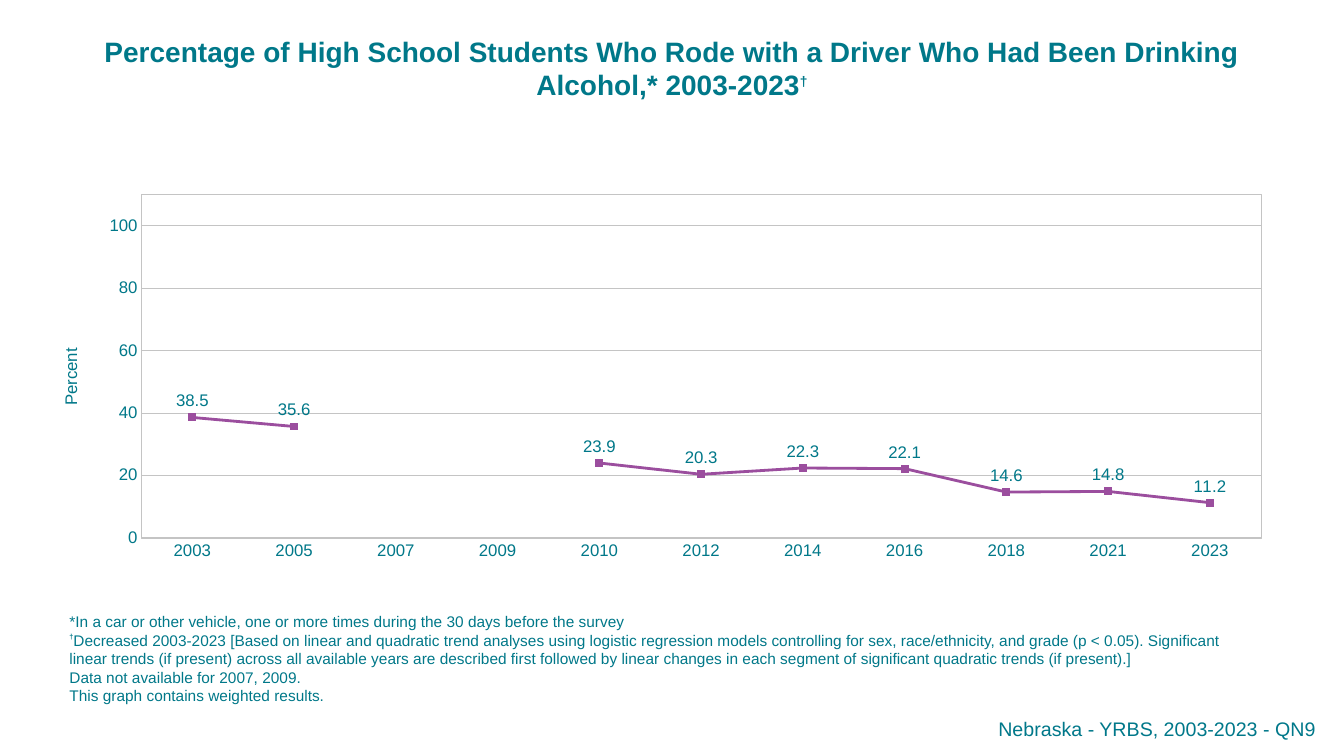
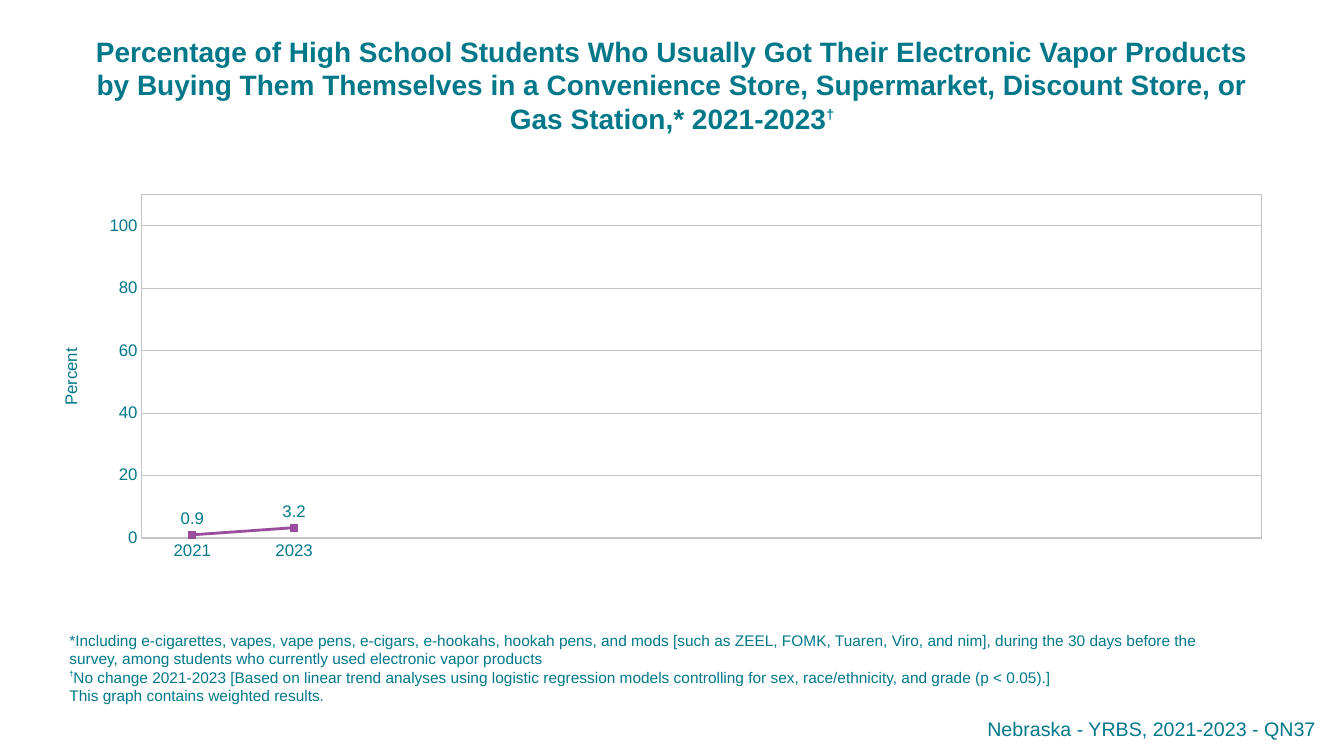
import dataclasses

import lxml.etree
import pptx
import pptx.chart.data
import pptx.dml.color
import pptx.enum.chart
import pptx.enum.text
import pptx.oxml
import pptx.oxml.ns
import pptx.util
from pptx.util import Inches

ALIGN = pptx.enum.text.PP_ALIGN
ANCHOR = pptx.enum.text.MSO_ANCHOR
TICK = pptx.enum.chart.XL_TICK_MARK
RGB = pptx.dml.color.RGBColor.from_string
Pt = pptx.util.Pt


@dataclasses.dataclass(frozen=True)
class Theme:
    font: str = "Arial"
    text: str = "007889"
    source: str = "00788A"
    chart_text: str = "00279F"
    grid: str = "C4C4C4"
    series: str = "9B4E9E"
    title_size: int = 20
    title_mark_size: int = 17
    note_size: int = 11
    note_mark_size: int = 9
    axis_size: int = 12
    chart_size: int = 18
    source_size: int = 14
    grid_width: float = 0.25
    series_width: int = 2


THEME = Theme()
DAGGER = "†"
CATEGORY_SLOTS = 11
WEIGHTED = "This graph contains weighted results."

SLIDES = [
    {
        "title": "Percentage of High School Students Who Rode with a Driver "
                 "Who Had Been Drinking Alcohol,* 2003-2023",
        "notes": [
            "*In a car or other vehicle, one or more times during the 30 days before the survey",
            "†Decreased 2003-2023 [Based on linear and quadratic trend analyses using logistic "
            "regression models controlling for sex, race/ethnicity, and grade (p < 0.05). "
            "Significant linear trends (if present) across all available years are described "
            "first followed by linear changes in each segment of significant quadratic trends "
            "(if present).]",
            "Data not available for 2007, 2009.",
            WEIGHTED,
        ],
        "percents": {
            "2003": 38.5, "2005": 35.6, "2007": None, "2009": None,
            "2010": 23.9, "2012": 20.3, "2014": 22.3, "2016": 22.1,
            "2018": 14.6, "2021": 14.8, "2023": 11.2,
        },
        "source": "Nebraska - YRBS, 2003-2023 - QN9",
    },
    {
        "title": "Percentage of High School Students Who Usually Got Their Electronic Vapor "
                 "Products by Buying Them Themselves in a Convenience Store, Supermarket, "
                 "Discount Store, or Gas Station,* 2021-2023",
        "notes": [
            "*Including e-cigarettes, vapes, vape pens, e-cigars, e-hookahs, hookah pens, and "
            "mods [such as ZEEL, FOMK, Tuaren, Viro, and nim], during the 30 days before the "
            "survey, among students who currently used electronic vapor products",
            "†No change 2021-2023 [Based on linear trend analyses using logistic regression "
            "models controlling for sex, race/ethnicity, and grade (p < 0.05).]",
            WEIGHTED,
        ],
        "percents": {"2021": 0.9, "2023": 3.2},
        "source": "Nebraska - YRBS, 2021-2023 - QN37",
    },
]


def style_font(font, size, color, bold=False):
    font.name = THEME.font
    font.size = Pt(size)
    font.bold = bold
    font.color.rgb = RGB(color)


def add_text(slide, box, paragraphs, align, anchor=ANCHOR.TOP):
    """Each run is (text, size, color, bold, raise in percent)."""
    shape = slide.shapes.add_textbox(*map(Inches, box))
    frame = shape.text_frame
    frame.word_wrap = True
    frame.vertical_anchor = anchor
    for index, runs in enumerate(paragraphs):
        paragraph = frame.add_paragraph() if index else frame.paragraphs[0]
        paragraph.alignment = align
        for text, size, color, bold, rise in runs:
            run = paragraph.add_run()
            run.text = text
            style_font(run.font, size, color, bold)
            if rise:
                run.font._element.set("baseline", str(rise * 1000))


presentation = pptx.Presentation()
presentation.slide_width = Inches(13.33)
presentation.slide_height = Inches(7.5)

for content in SLIDES:
    slide = presentation.slides.add_slide(presentation.slide_layouts[6])

    # Title
    add_text(slide, (0.83, 0.29, 11.67, 1.12), [[
        (content["title"], THEME.title_size, THEME.text, True, 0),
        (DAGGER, THEME.title_mark_size, THEME.text, True, 40),
    ]], ALIGN.CENTER)

    # Footnotes, resting on the bottom of their box
    notes = []
    for note in content["notes"]:
        runs = [(note.removeprefix(DAGGER), THEME.note_size, THEME.text, False, 0)]
        if note.startswith(DAGGER):
            runs.insert(0, (DAGGER, THEME.note_mark_size, THEME.text, True, 50))
        notes.append(runs)
    add_text(slide, (0.59, 5.99, 11.83, 1.05), notes, ALIGN.LEFT, ANCHOR.BOTTOM)

    # Chart data, padded so that every chart has the same year spacing
    percents = content["percents"]
    padding = CATEGORY_SLOTS - len(percents)
    chart_data = pptx.chart.data.CategoryChartData(number_format="#,##0.0")
    chart_data.categories = list(percents) + [""] * padding
    chart_data.add_series("Series 1", list(percents.values()) + [None] * padding)
    chart = slide.shapes.add_chart(
        pptx.enum.chart.XL_CHART_TYPE.LINE_MARKERS,
        Inches(0.57), Inches(1.77), Inches(12.08), Inches(4.15), chart_data,
    ).chart
    chart.has_legend = False
    chart.has_title = False
    style_font(chart.font, THEME.chart_size, THEME.chart_text)

    # Axes
    value_axis = chart.value_axis
    for axis in (chart.category_axis, value_axis):
        axis.major_tick_mark = axis.minor_tick_mark = TICK.NONE
        style_font(axis.tick_labels.font, THEME.axis_size, THEME.text)
        axis.format.line.color.rgb = RGB(THEME.grid)
        axis.format.line.width = Pt(THEME.grid_width)
    value_axis.minimum_scale = 0
    value_axis.maximum_scale = 110
    value_axis.major_unit = 20
    value_axis.tick_labels.number_format = "#,##0"
    value_axis.tick_labels.number_format_is_linked = False
    value_axis.has_major_gridlines = True
    value_axis.major_gridlines.format.line.color.rgb = RGB(THEME.grid)
    value_axis.major_gridlines.format.line.width = Pt(THEME.grid_width)
    title_frame = value_axis.axis_title.text_frame
    title_run = title_frame.paragraphs[0].add_run()
    title_run.text = "Percent"
    style_font(title_run.font, THEME.axis_size, THEME.text)
    body = title_frame._element.find(pptx.oxml.ns.qn("a:bodyPr"))
    body.set("rot", "-5400000")
    body.set("vert", "horz")

    # Series and its labels
    plot = chart.plots[0]
    plot.vary_by_categories = False
    series = plot.series[0]
    series.smooth = False
    series.format.line.color.rgb = RGB(THEME.series)
    series.format.line.width = Pt(THEME.series_width)
    series.marker.style = pptx.enum.chart.XL_MARKER_STYLE.SQUARE
    series.marker.size = 5
    series.marker.format.fill.solid()
    series.marker.format.fill.fore_color.rgb = RGB(THEME.series)
    series.marker.format.line.color.rgb = RGB(THEME.series)
    labels = series.data_labels
    labels.show_value = True
    labels.position = pptx.enum.chart.XL_LABEL_POSITION.ABOVE
    labels.number_format = "#,##0.0"
    labels.number_format_is_linked = False
    style_font(labels.font, THEME.axis_size, THEME.text)

    # Plot area: fixed inner position and a thin frame
    plot_area = chart._chartSpace.xpath("c:chart/c:plotArea")[0]
    for layout in plot_area.xpath("c:layout"):
        plot_area.remove(layout)
    layout = lxml.etree.Element(pptx.oxml.ns.qn("c:layout"))
    manual = lxml.etree.SubElement(layout, pptx.oxml.ns.qn("c:manualLayout"))
    for tag, value in (
        ("layoutTarget", "inner"), ("xMode", "edge"), ("yMode", "edge"),
        ("x", "0.069"), ("y", "0.038"), ("w", "0.919"), ("h", "0.821"),
    ):
        lxml.etree.SubElement(manual, pptx.oxml.ns.qn("c:" + tag)).set("val", value)
    plot_area.insert(0, layout)
    plot_area.append(pptx.oxml.parse_xml(
        f'<c:spPr {pptx.oxml.ns.nsdecls("c", "a")}><a:noFill/>'
        f'<a:ln w="{Pt(THEME.grid_width)}"><a:solidFill>'
        f'<a:srgbClr val="{THEME.grid}"/></a:solidFill></a:ln></c:spPr>'
    ))

    # Source line
    add_text(slide, (3.75, 7.06, 9.4, 0.34), [[
        (content["source"], THEME.source_size, THEME.source, False, 0),
    ]], ALIGN.RIGHT)

presentation.save("out.pptx")
